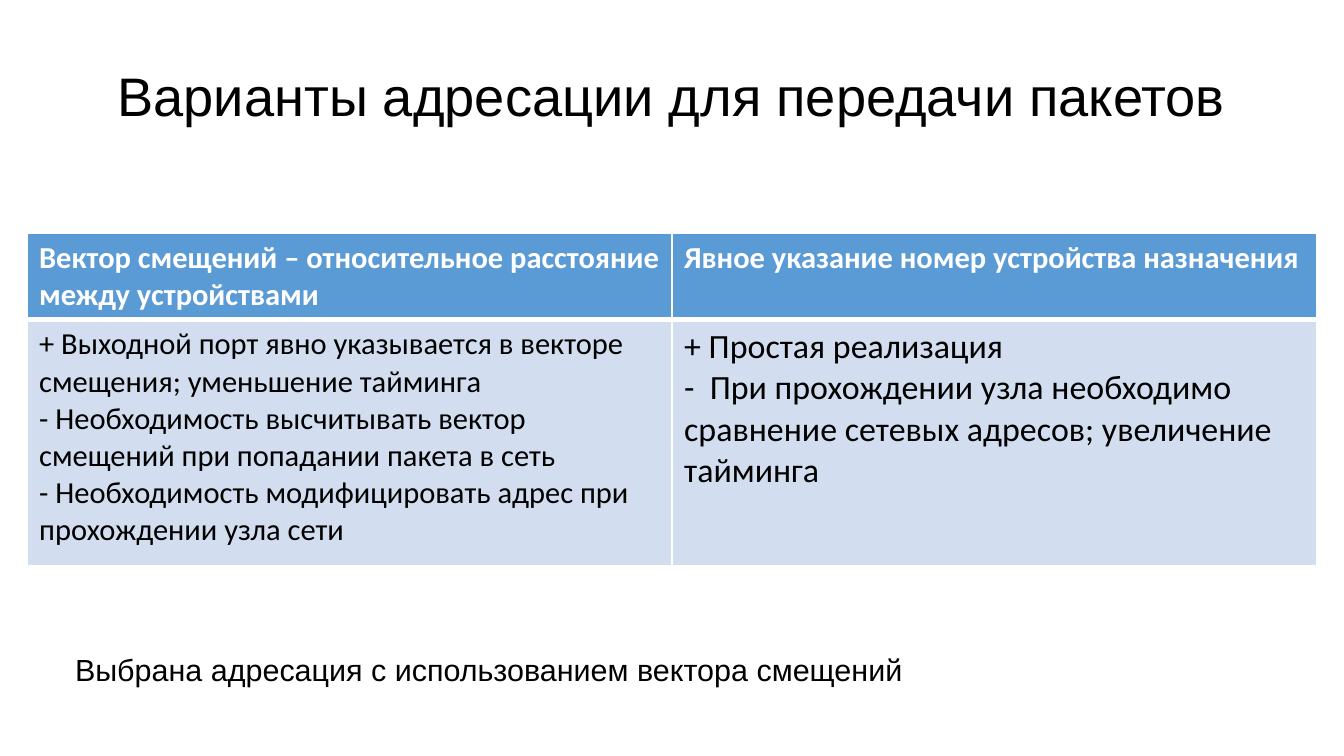
from lxml import etree
from pptx import Presentation
from pptx.dml.color import RGBColor
from pptx.enum.text import MSO_ANCHOR, PP_ALIGN
from pptx.oxml.ns import qn
from pptx.util import Emu, Pt

SCALE = 914400 / 122
TITLE_ONLY = 5
MIDDLE, TOP = MSO_ANCHOR.MIDDLE, MSO_ANCHOR.TOP
LEFT, CENTER = PP_ALIGN.LEFT, PP_ALIGN.CENTER
COLORS = {"text": "000000", "white": "FFFFFF", "header": "5B9BD5", "body": "D2DEEF"}

HEADERS = [
    "Вектор смещений – относительное расстояние между устройствами",
    "Явное указание номер устройства назначения",
]
VECTOR_POINTS = [
    "+ Выходной порт явно указывается в векторе смещения; уменьшение тайминга",
    "- Необходимость высчитывать вектор смещений при попадании пакета в сеть",
    "- Необходимость модифицировать адрес при прохождении узла сети",
]
EXPLICIT_POINTS = [
    "+ Простая реализация",
    "-  При прохождении узла необходимо сравнение сетевых адресов; увеличение тайминга",
]


def px(length):
    return Emu(round(length * SCALE))


def color(name):
    return RGBColor.from_string(COLORS[name])


def write_text(text_frame, lines, size=18, font="Arial", fill="text", bold=False,
               align=LEFT):
    for index, line in enumerate(lines):
        paragraph = text_frame.paragraphs[0] if index == 0 else text_frame.add_paragraph()
        paragraph.alignment = align
        run = paragraph.add_run()
        run.text = line
        run.font.size = Pt(size)
        run.font.name = font
        run.font.bold = bold
        run.font.color.rgb = color(fill)


def set_borders(cell, **widths):
    properties = cell._tc.get_or_add_tcPr()
    for index, (side, width) in enumerate(widths.items()):
        line = etree.Element(qn(f"a:ln{side}"), w=str(Pt(width)))
        solid = etree.SubElement(line, qn("a:solidFill"))
        etree.SubElement(solid, qn("a:srgbClr"), val=COLORS["white"])
        properties.insert(index, line)


def add_title(slide, text, left, top, width, height):
    title = slide.shapes.title
    title.left, title.top, title.width, title.height = map(px, (left, top, width, height))
    frame = title.text_frame
    frame.margin_left = frame.margin_top = frame.margin_right = frame.margin_bottom = 0
    frame.vertical_anchor = MIDDLE
    write_text(frame, [text], size=32, align=CENTER)


def fill_cell(cell, lines, background, top=1, bottom=1, **text_format):
    cell.fill.solid()
    cell.fill.fore_color.rgb = color(background)
    cell.vertical_anchor = TOP
    set_borders(cell, L=1, R=1, T=top, B=bottom)
    write_text(cell.text_frame, lines, font="Calibri", **text_format)


def add_comparison(slide, left, top, width, row_heights):
    table = slide.shapes.add_table(
        2, 2, px(left), px(top), px(width), px(sum(row_heights))).table
    table.horz_banding = False
    for row, height in zip(table.rows, row_heights):
        row.height = px(height)
    for column, header in enumerate(HEADERS):
        fill_cell(table.cell(0, column), [header], "header", bottom=3,
                  fill="white", bold=True)
    for column, (points, size) in enumerate([(VECTOR_POINTS, 18), (EXPLICIT_POINTS, 20)]):
        fill_cell(table.cell(1, column), points, "body", top=3, size=size)


def add_note(slide, text, left, top, width, height):
    box = slide.shapes.add_textbox(px(left), px(top), px(width), px(height))
    box.text_frame.word_wrap = True
    write_text(box.text_frame, [text])


def main():
    """Build the slide that compares two ways of addressing packets."""
    presentation = Presentation()
    presentation.slide_width, presentation.slide_height = px(1344), px(756)
    slide = presentation.slides.add_slide(presentation.slide_layouts[TITLE_ONLY])
    add_title(slide, "Варианты адресации для передачи пакетов", 67, 31, 1210, 127)
    add_comparison(slide, 27, 233, 1290, (86, 246))
    add_note(slide, "Выбрана адресация с использованием вектора смещений", 63, 645, 860, 49)
    presentation.save("out.pptx")


if __name__ == "__main__":
    main()
